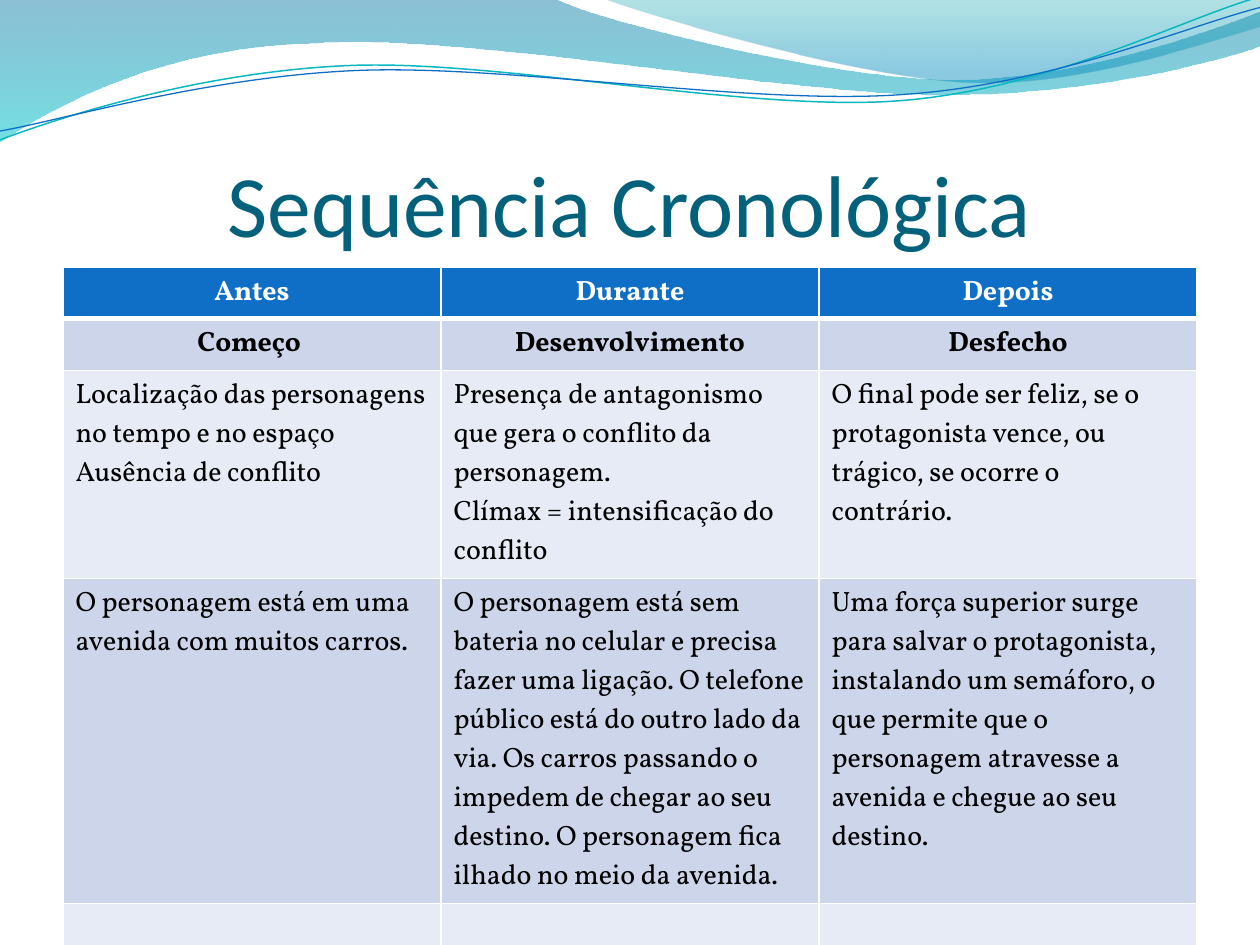
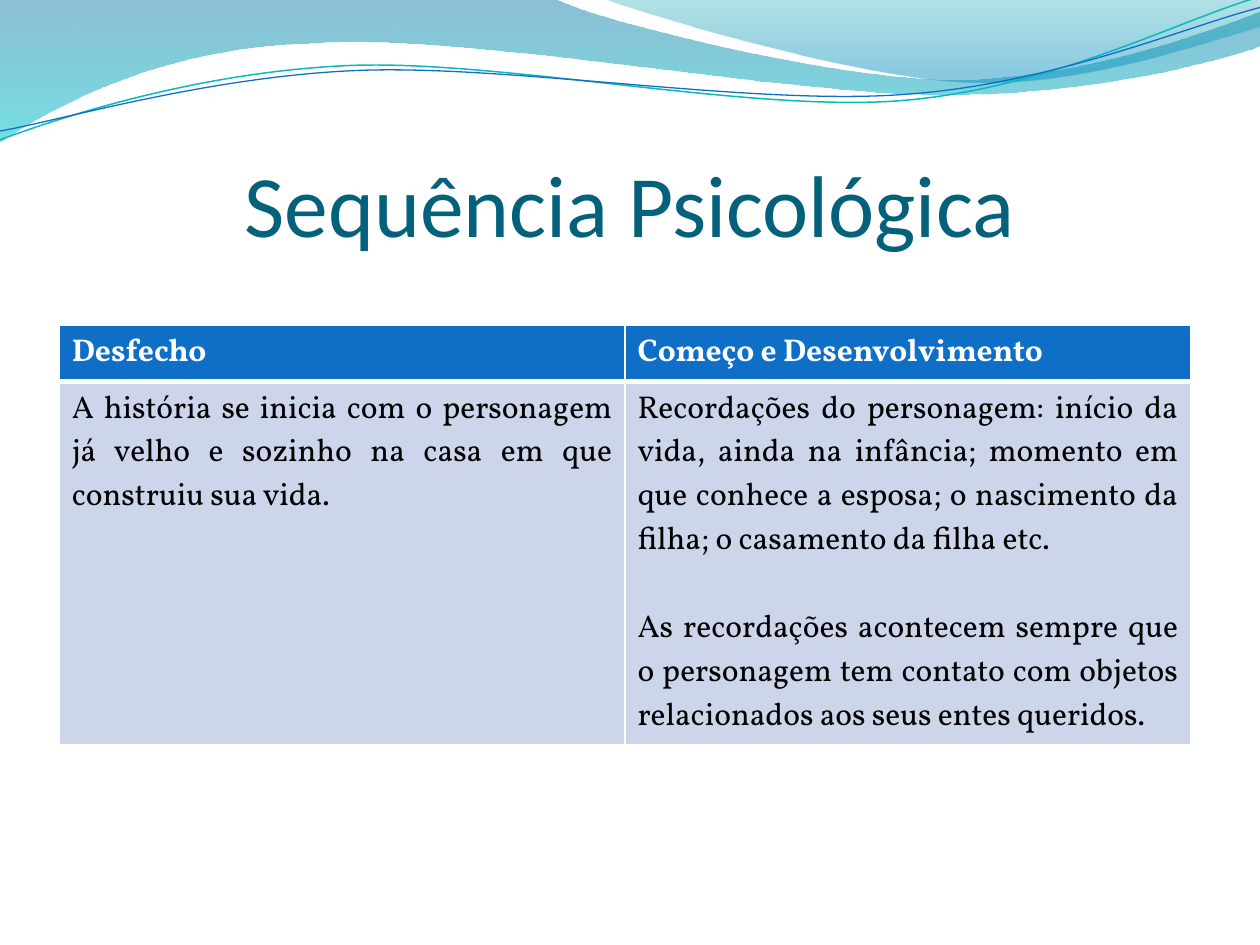
import math

from lxml import etree
from pptx import Presentation
from pptx.dml.color import RGBColor
from pptx.enum import text
from pptx.oxml import ns
from pptx.util import Inches, Pt

COLORS = {
    "title": "04617B", "header": "0F6FC6", "white": "FFFFFF", "black": "000000",
    "band_dark": "CCD5EA", "band_light": "E7EBF5",
    "wave_blue": "0074A1", "wave_cyan": "00C6CF",
    "crest_teal": "00A1A9", "crest_blue": "008BBF",
    "line_teal": "0AB8BF", "line_blue": "0F6FC6",
}
TITLE_FONT, TABLE_FONT = "Calibri", "Vollkorn"
CURVE_TILT = 357.3

WAVE = [
    (0, 0), (4.4, -0.01),
    (4.76, 0.17, 6.64, 0.63, 7.58, 0.63), (8.53, 0.63, 9.58, 0.26, 10, 0.09),
    (10.01, 0.36),
    (9.83, 0.44, 8.7, 0.76, 7.46, 0.75), (6.22, 0.75, 3.82, 0.28, 2.57, 0.34),
    (1.29, 0.36, 0.46, 0.83, -0.01, 1.13), (0, 0),
]
CREST = [
    (4.79, -0.01),
    (5.09, 0.11, 6.82, 0.62, 7.69, 0.65), (8.56, 0.69, 9.61, 0.32, 10, 0.21),
    (10, 0), (4.79, -0.01),
]
TEAL_LINE = [
    (0, 1.11), (0.48, 0.93, 1.58, 0.57, 2.77, 0.52),
    (3.95, 0.47, 5.93, 0.89, 7.13, 0.8), (8.33, 0.71, 9.38, 0.15, 9.98, -0.02),
]
BLUE_LINE = [
    (0, 1.04), (0.47, 0.96, 1.64, 0.61, 2.83, 0.56),
    (4.03, 0.51, 5.97, 0.84, 7.17, 0.75), (8.36, 0.67, 9.41, 0.21, 10, 0.06),
]

CHRONOLOGICAL = [
    [["Antes"], ["Durante"], ["Depois"]],
    [["Começo "], ["Desenvolvimento"], ["Desfecho"]],
    [
        ["Localização das personagens no tempo e no espaço", "Ausência de conflito"],
        ["Presença de antagonismo que gera o conflito da personagem.",
         "Clímax = intensificação do conflito"],
        ["O final pode ser feliz, se o protagonista vence, ou trágico, "
         "se ocorre o contrário."],
    ],
    [
        ["O personagem está em uma avenida com muitos carros."],
        ["O personagem está sem bateria no celular e precisa fazer uma ligação. "
         "O telefone público está do outro lado da via. Os carros passando o "
         "impedem de chegar ao seu destino. O personagem fica ilhado no meio da "
         "avenida."],
        ["Uma força superior surge para salvar o protagonista, instalando um "
         "semáforo, o que permite que o personagem atravesse a avenida e chegue "
         "ao seu destino."],
    ],
    [[], [], []],
]
PSYCHOLOGICAL = [
    [["Desfecho"], ["Começo e Desenvolvimento"]],
    [
        ["A história se inicia com o personagem já velho e sozinho na casa em que "
         "construiu sua vida. "],
        ["Recordações do personagem: início da vida, ainda na infância; momento em "
         "que conhece a esposa; o nascimento da filha; o casamento da filha etc. ",
         "As recordações acontecem sempre que o personagem tem contato com objetos "
         "relacionados aos seus entes queridos."],
    ],
]


def rgb(name):
    return RGBColor.from_string(COLORS[name])


def level(segments, center):
    angle = math.radians(360 - CURVE_TILT)
    cosine, sine = math.cos(angle), math.sin(angle)

    def turn(x, y):
        dx, dy = x - center[0], y - center[1]
        return (center[0] + dx * cosine - dy * sine,
                center[1] + dx * sine + dy * cosine)

    return [sum((turn(*segment[i:i + 2]) for i in range(0, len(segment), 2)), ())
            for segment in segments]


def bend(shape, segments):
    lines = list(shape._element.spPr.iter(ns.qn("a:lnTo")))
    for segment in segments:
        count = len(segment) // 2
        group, lines = lines[:count], lines[count:]
        if count == 3:
            curve = etree.Element(ns.qn("a:cubicBezTo"))
            group[0].addprevious(curve)
            for line in group:
                curve.append(line[0])
                line.getparent().remove(line)


def add_outline(page, segments, close):
    points = [(Inches(segment[i]), Inches(segment[i + 1]))
              for segment in segments for i in range(0, len(segment), 2)]
    builder = page.shapes.build_freeform(*points[0], scale=1.0)
    builder.add_line_segments(points[1:], close=close)
    shape = builder.convert_to_shape()
    bend(shape, segments[1:])
    shape.shadow.inherit = False
    return shape


def add_wave(page, segments, stops):
    shape = add_outline(page, segments, True)
    shape.line.fill.background()
    shape.fill.gradient()
    shape.fill.gradient_angle = 270
    for stop, (position, color, _) in zip(shape.fill.gradient_stops, stops):
        stop.position = position
        stop.color.rgb = rgb(color)
    tints = shape._element.spPr.iter(ns.qn("a:srgbClr"))
    for tint, (_, _, opacity) in zip(tints, stops):
        etree.SubElement(tint, ns.qn("a:alpha"), val=str(opacity * 1000))


def add_curve(page, segments, center, color, width):
    shape = add_outline(page, level(segments, center), False)
    shape.rotation = CURVE_TILT
    shape.fill.background()
    shape.line.color.rgb = rgb(color)
    shape.line.width = Pt(width)


def add_span(para, words, size, font, color, bold=False):
    span = para.add_run()
    span.text = words
    span.font.size = Pt(size)
    span.font.name = font
    span.font.bold = bold
    span.font.color.rgb = rgb(color)


def add_title(page, words):
    box = page.shapes.add_textbox(Inches(0.5), Inches(0.77), Inches(9), Inches(1.25))
    frame = box.text_frame
    frame.word_wrap = True
    frame.vertical_anchor = text.MSO_ANCHOR.BOTTOM
    frame.margin_left = frame.margin_right = frame.margin_bottom = 0
    frame.margin_top = Inches(0.05)
    para = frame.paragraphs[0]
    para.alignment = text.PP_ALIGN.CENTER
    add_span(para, words, 50, TITLE_FONT, "title")


def set_borders(cell, row):
    widths = {"L": 1, "R": 1, "T": 3 if row == 1 else 1, "B": 3 if row == 0 else 1}
    properties = cell._tc.get_or_add_tcPr()
    for side, width in widths.items():
        line = etree.SubElement(properties, ns.qn(f"a:ln{side}"), w=str(Pt(width)))
        fill = etree.SubElement(line, ns.qn("a:solidFill"))
        etree.SubElement(fill, ns.qn("a:srgbClr"), val=COLORS["white"])


def fill_cell(cell, paragraphs, row, size, bold, alignment, gap):
    set_borders(cell, row)
    cell.fill.solid()
    band = "band_dark" if row % 2 else "band_light"
    cell.fill.fore_color.rgb = rgb(band if row else "header")
    frame = cell.text_frame
    for index, words in enumerate(paragraphs):
        para = frame.add_paragraph() if index else frame.paragraphs[0]
        para.alignment = alignment
        if index and gap:
            para.space_before = Pt(gap)
        add_span(para, words, size, TABLE_FONT, "black" if row else "white", bold)


def add_grid(page, left, top, width, heights, content, size, bold_rows,
             heading_align, body_align, gap=0):
    columns = len(content[0])
    table = page.shapes.add_table(
        len(content), columns, Inches(left), Inches(top),
        Inches(width), Inches(sum(heights))).table
    for column in table.columns:
        column.width = Inches(width / columns)
    for row, (height, cells) in enumerate(zip(heights, content)):
        table.rows[row].height = Inches(height)
        bold = row < bold_rows
        for column, paragraphs in enumerate(cells):
            fill_cell(table.cell(row, column), paragraphs, row, size, bold,
                      heading_align if bold else body_align, gap)


def add_page(deck, title):
    page = deck.slides.add_slide(deck.slide_layouts[6])
    add_wave(page, WAVE, [(0, "wave_blue", 45), (1, "wave_cyan", 55)])
    add_wave(page, CREST, [(0, "crest_teal", 30), (0.8, "crest_blue", 45)])
    add_curve(page, TEAL_LINE, (4.99, 0.58), "line_teal", 0.85)
    add_curve(page, BLUE_LINE, (5, 0.59), "line_blue", 0.75)
    add_title(page, title)
    return page


def main():
    deck = Presentation()
    deck.slide_width, deck.slide_height = Inches(10), Inches(7.5)
    align = text.PP_ALIGN

    page = add_page(deck, "Sequência Cronológica")
    add_grid(page, 0.5, 2.12, 9, [0.41, 0.41, 1.65, 2.58, 0.41], CHRONOLOGICAL,
             16, 2, align.CENTER, align.LEFT)

    page = add_page(deck, "Sequência Psicológica")
    add_grid(page, 0.47, 2.58, 8.98, [0.45, 2.88], PSYCHOLOGICAL,
             18, 1, align.JUSTIFY, align.JUSTIFY, gap=25.2)

    deck.save("out.pptx")


if __name__ == "__main__":
    main()
